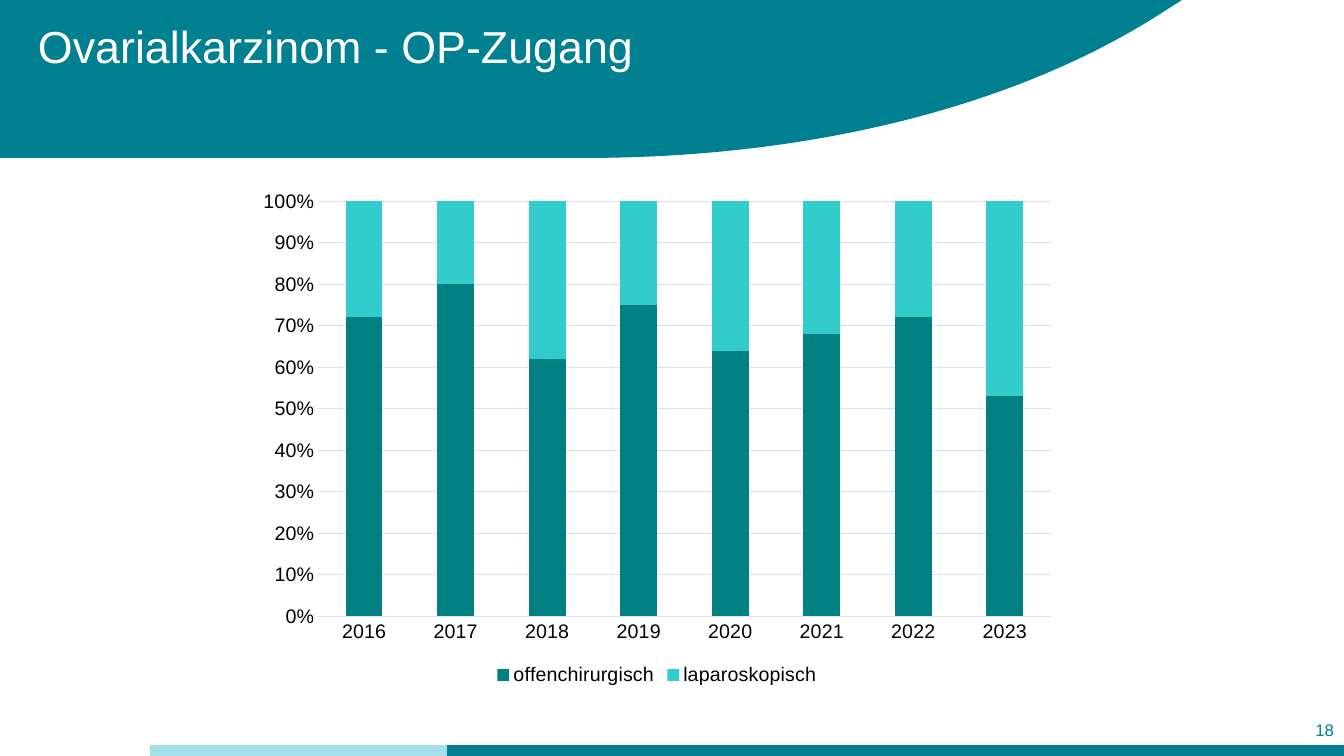
"""Build the slide on surgical access for ovarian carcinoma, 2016 to 2023."""
import pptx
import pptx.chart.data
import pptx.dml.color
import pptx.enum.chart
import pptx.enum.shapes
import pptx.enum.text
import pptx.util

PX = 914400 / 100.8
FONT = "Arial"
COLORS = {
    "petrol": "008090",
    "pale": "A5DFEA",
    "open": "008080",
    "laparoscopic": "33CCCC",
    "grid": "D5E1ED",
    "white": "FFFFFF",
    "black": "000000",
}


def paint(target, color):
    target.fill.solid()
    target.fill.fore_color.rgb = pptx.dml.color.RGBColor.from_string(COLORS[color])


def add_text(text, box, size, color, align="LEFT", anchor="TOP", spacing=1.0):
    frame = slide.shapes.add_textbox(*[round(v * PX) for v in box]).text_frame
    frame.word_wrap = True
    frame.vertical_anchor = pptx.enum.text.MSO_ANCHOR[anchor]
    paragraph = frame.paragraphs[0]
    paragraph.alignment = pptx.enum.text.PP_ALIGN[align]
    paragraph.line_spacing = spacing
    run = paragraph.add_run()
    run.text = text
    run.font.name = FONT
    run.font.size = pptx.util.Pt(size)
    run.font.color.rgb = pptx.dml.color.RGBColor.from_string(COLORS[color])


deck = pptx.Presentation()
deck.slide_width = round(1344 * PX)
deck.slide_height = round(756 * PX)
slide = deck.slides.add_slide(deck.slide_layouts[6])

curve = [(1160, 14), (1019, 104), (818, 158), (584, 158)]
steps = 60
arc = []
for step in range(steps + 1):
    t = step / steps
    weights = [(1 - t) ** 3, 3 * t * (1 - t) ** 2, 3 * t**2 * (1 - t), t**3]
    arc.append([sum(w * p[axis] for w, p in zip(weights, curve)) * PX for axis in (0, 1)])
outline = slide.shapes.build_freeform(0, 0)
outline.add_line_segments([(1182 * PX, 0), *arc, (0, 158 * PX)], close=True)
header = outline.convert_to_shape()
header.shadow.inherit = False
header.line.fill.background()
paint(header, "petrol")

for left, width, color in [(447, 897, "petrol"), (150, 297, "pale")]:
    footer = slide.shapes.add_shape(
        pptx.enum.shapes.MSO_SHAPE.RECTANGLE,
        *[round(v * PX) for v in (left, 745, width, 11)],
    )
    footer.shadow.inherit = False
    footer.line.fill.background()
    paint(footer, color)

add_text("18", (1269, 710, 75, 40), size=12, color="petrol", align="RIGHT", anchor="MIDDLE")
add_text("Ovarialkarzinom - OP-Zugang", (28, 20, 720, 119), size=32, color="white", spacing=0.9)

access = pptx.chart.data.CategoryChartData(number_format="0")
access.categories = [str(year) for year in range(2016, 2024)]
open_share = [72, 80, 62, 75, 64, 68, 72, 53]
access.add_series("offenchirurgisch", open_share)
access.add_series("laparoskopisch", [100 - share for share in open_share])
chart = slide.shapes.add_chart(
    pptx.enum.chart.XL_CHART_TYPE.COLUMN_STACKED_100,
    *[round(v * PX) for v in (247, 180, 820, 510)],
    access,
).chart
chart.has_title = False
chart.font.name = FONT
chart.font.size = pptx.util.Pt(14)
chart.font.color.rgb = pptx.dml.color.RGBColor.from_string(COLORS["black"])

columns = chart.plots[0]
columns.gap_width = 150
columns.overlap = 100
columns.vary_by_categories = False
for series, color in zip(columns.series, ("open", "laparoscopic")):
    paint(series.format, color)

years, shares = chart.category_axis, chart.value_axis
for axis in (years, shares):
    axis.major_tick_mark = pptx.enum.chart.XL_TICK_MARK.NONE
    axis.minor_tick_mark = pptx.enum.chart.XL_TICK_MARK.NONE
shares.format.line.fill.background()
shares.has_major_gridlines = True
shares.major_unit = 0.1
shares.tick_labels.number_format = "0%"
shares.tick_labels.number_format_is_linked = False
for line in (years.format.line, shares.major_gridlines.format.line):
    line.width = pptx.util.Pt(0.75)
    line.color.rgb = pptx.dml.color.RGBColor.from_string(COLORS["grid"])

chart.has_legend = True
chart.legend.position = pptx.enum.chart.XL_LEGEND_POSITION.BOTTOM
chart.legend.include_in_layout = False

deck.save("out.pptx")
